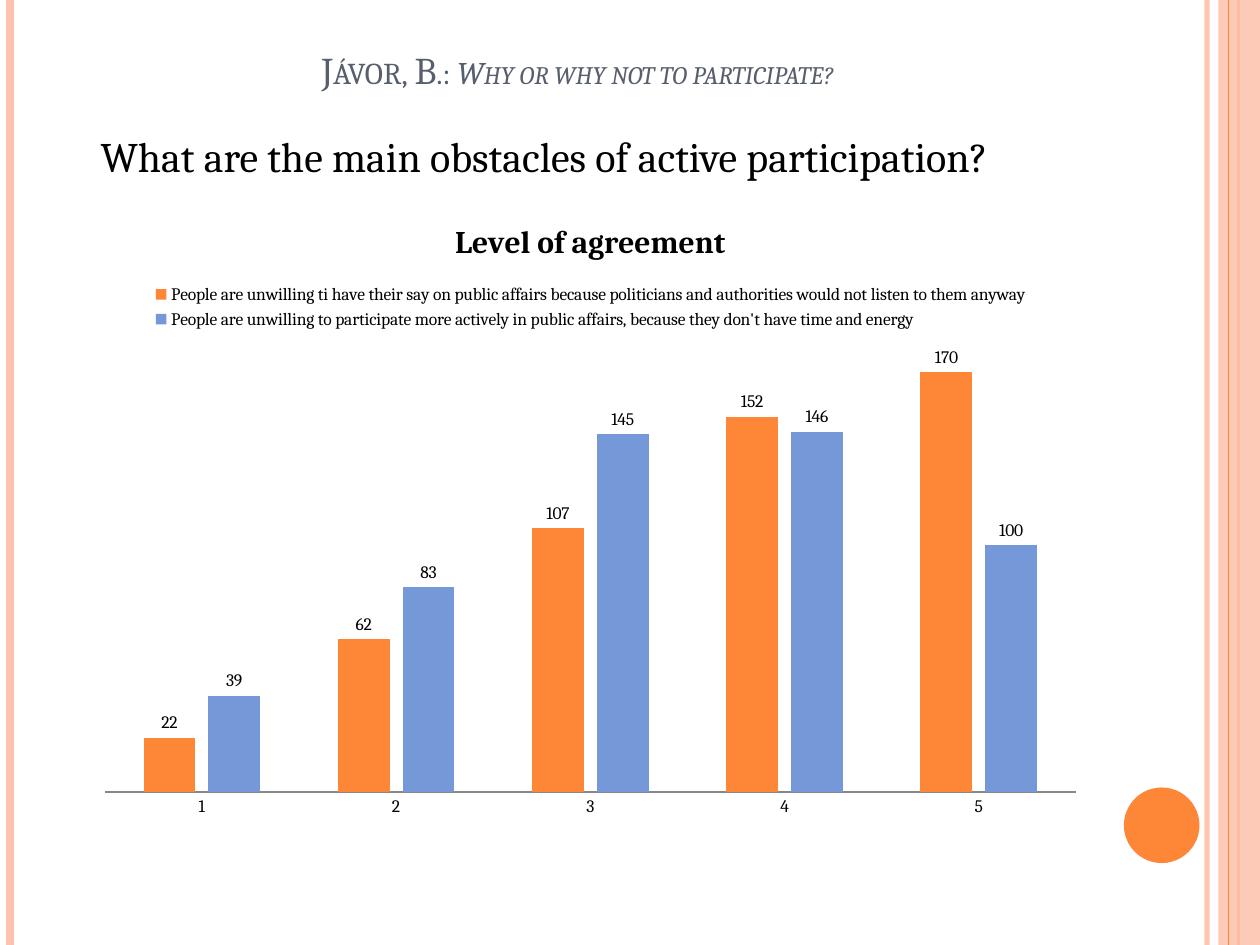
from lxml import etree
from pptx import Presentation
from pptx.chart.data import CategoryChartData
from pptx.dml.color import RGBColor
from pptx.enum.chart import (XL_CHART_TYPE, XL_LABEL_POSITION,
                             XL_LEGEND_POSITION, XL_TICK_MARK)
from pptx.enum.shapes import MSO_CONNECTOR, MSO_SHAPE
from pptx.enum.text import MSO_ANCHOR, PP_ALIGN
from pptx.oxml import parse_xml
from pptx.oxml.ns import nsdecls, qn
from pptx.util import Inches, Pt

COLUMN = XL_CHART_TYPE.COLUMN_CLUSTERED
OUTER = XL_LABEL_POSITION.OUTSIDE_END
TOP = XL_LEGEND_POSITION.TOP
NONE = XL_TICK_MARK.NONE
LINE = MSO_CONNECTOR.STRAIGHT
RECT, OVAL = MSO_SHAPE.RECTANGLE, MSO_SHAPE.OVAL
BOTTOM = MSO_ANCHOR.BOTTOM
CENTER = PP_ALIGN.CENTER

HUES = {"peach": "FEC3AE", "orange": "FE8637", "blue": "7598D9",
        "slate": "575F6D", "black": "000000", "gray": "888888"}
FACE = "Cambria"


def paint(fmt, hue, clear=None):
    """Fill with a solid colour, at an opacity in percent if given."""
    fmt.solid()
    fmt.fore_color.rgb = RGBColor.from_string(HUES[hue])
    if clear:
        node = next(fmt._xPr.iter(qn("a:srgbClr")))
        etree.SubElement(node, qn("a:alpha")).set("val", str(clear * 1000))


def style(font, size, hue="black", **more):
    """Set the face, size and colour of a font, and any further values."""
    for key, val in {"name": FACE, "size": Pt(size), **more}.items():
        setattr(font, key, val)
    font.color.rgb = RGBColor.from_string(HUES[hue])


deck = Presentation()
deck.slide_width, deck.slide_height = Inches(10), Inches(7.5)
slide = deck.slides.add_slide(deck.slide_layouts[6])
shapes = slide.shapes

# Side stripes, band and dot, from back to front
for kind, hue, clear, *geo in [
    (LINE, "peach", 93, 9.58, 3),
    (LINE, "peach", None, 0.08, 4.5),
    (LINE, "orange", None, 9.83, 1.5),
    (RECT, "peach", 87, 9.67, 0, 0.33, 7.5),
    (LINE, "orange", None, 9.75, 0.75),
    (OVAL, "orange", None, 8.92, 6.25, 0.6, 0.6),
]:
    if kind is LINE:
        x, width = geo
        part = shapes.add_connector(kind, Inches(x), 0, Inches(x), Inches(7.5))
        part.line.width = Pt(width)
        paint(part.line.fill, hue, clear)
        etree.SubElement(part._element.spPr, qn("a:effectLst"))
    else:
        part = shapes.add_shape(kind, *map(Inches, geo))
        part.shadow.inherit = False
        paint(part.fill, hue, clear)
        part.line.fill.background()

# Title in small capitals
head = shapes.add_textbox(*map(Inches, (0.5, 0.3, 8.17, 0.48))).text_frame
head.word_wrap, head.vertical_anchor = True, BOTTOM
para = head.paragraphs[0]
para.alignment = CENTER
for words, size, slant in [("Jávor, B.: ", 21.6, False),
                           ("Why or why not to participate?", 18, True)]:
    run = para.add_run()
    run.text = words
    style(run.font, size, "slate", italic=slant)
    run.font._element.set("cap", "small")

# Question
body = shapes.add_textbox(*map(Inches, (0.7, 0.99, 8.08, 1.31))).text_frame
body.word_wrap = True
run = body.paragraphs[0].add_run()
run.text = "What are the main obstacles of active participation?"
style(run.font, 24)

# Chart data
bars = [
    ("People are unwilling ti have their say on public affairs because "
     "politicians and authorities would not listen to them anyway",
     (22, 62, 107, 152, 170), "orange"),
    ("People are unwilling to participate more actively in public affairs, "
     "because they don't have time and energy",
     (39, 83, 145, 146, 100), "blue"),
]
data = CategoryChartData()
data.categories = ["1", "2", "3", "4", "5"]
for name, vals, hue in bars:
    data.add_series(name, vals)
chart = shapes.add_chart(
    COLUMN, *map(Inches, (0.67, 1.55, 8.03, 5.04)), data).chart
style(chart.font, 10)

# Chart title and legend
chart.has_title = True
run = chart.chart_title.text_frame.paragraphs[0].add_run()
run.text = "Level of agreement"
style(run.font, 18, bold=True)
chart.has_legend = True
chart.legend.position = TOP
chart.legend.include_in_layout = False

# Columns with their values
plot = chart.plots[0]
for key, val in {"gap_width": 150, "overlap": -25,
                 "vary_by_categories": False}.items():
    setattr(plot, key, val)
for row, (name, vals, hue) in zip(plot.series, bars):
    paint(row.format.fill, hue)
    row.data_labels.show_value = True
    row.data_labels.position = OUTER

# Axes
base, scale = chart.category_axis, chart.value_axis
base.major_tick_mark = base.minor_tick_mark = NONE
paint(base.format.line.fill, "gray")
base.format.line.width = Pt(1)
for key, val in {"minimum_scale": 0, "maximum_scale": 180, "visible": False,
                 "has_major_gridlines": False}.items():
    setattr(scale, key, val)

# Plot area inside the chart, as shares of its size
area = next(chart._chartSpace.iter(qn("c:plotArea")))
for old in area.findall(qn("c:layout")):
    area.remove(old)
room = "".join(f'<c:{key} val="{val}"/>' for key, val in [
    ("layoutTarget", "inner"), ("xMode", "edge"), ("yMode", "edge"),
    ("x", 0.02), ("y", 0.24), ("w", 0.96), ("h", 0.7)])
area.insert(0, parse_xml(
    f'<c:layout {nsdecls("c")}><c:manualLayout>{room}'
    '</c:manualLayout></c:layout>'))

deck.save("out.pptx")
